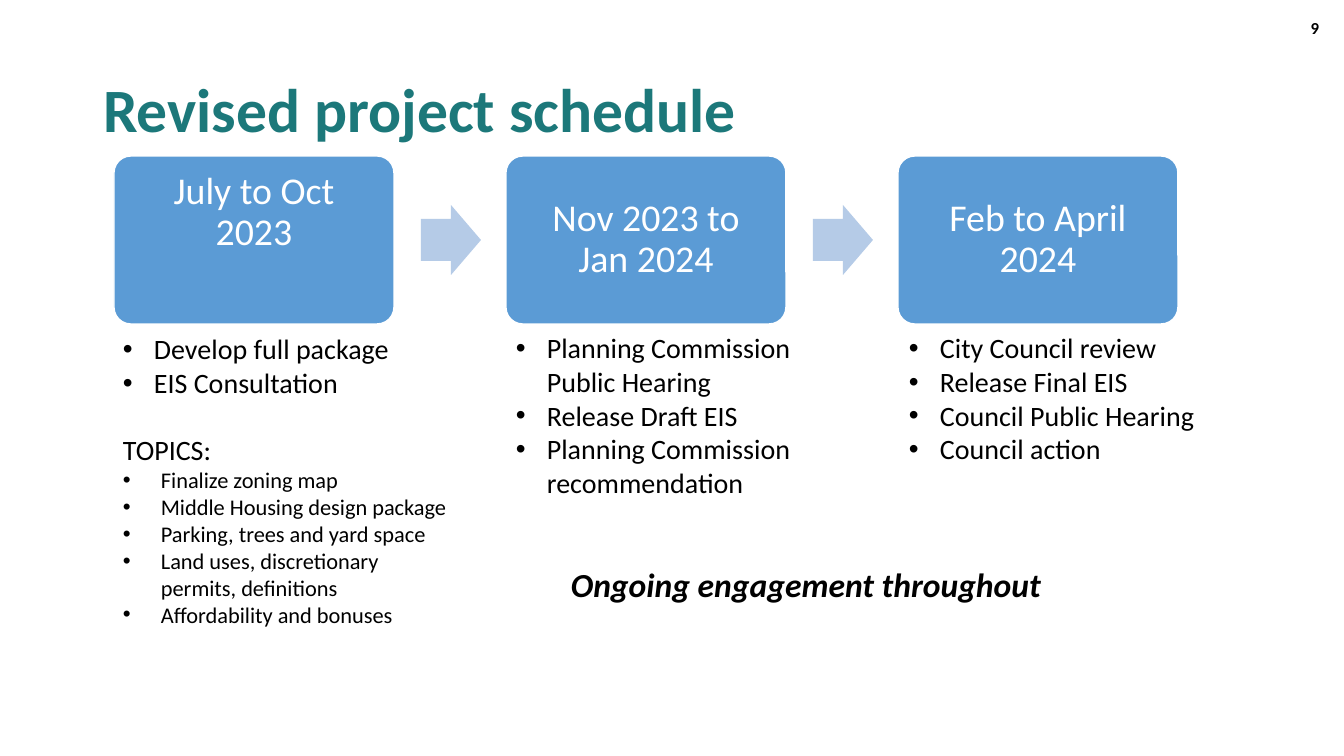
from lxml.etree import SubElement
from pptx import Presentation
from pptx.dml.color import RGBColor
from pptx.enum.shapes import MSO_SHAPE as Shape
from pptx.enum.text import MSO_ANCHOR as Anchor, MSO_AUTO_SIZE as AutoSize, PP_ALIGN as Align
from pptx.oxml.ns import qn
from pptx.util import Pt

# Content: (text, size, bullet indent in px, space before in pt)
TITLE = "Revised project schedule"
PAGE_NUMBER = "9"
CLOSING = "Ongoing engagement throughout"
PHASES = [
    {
        "period": "July to Oct 2023",
        "raise": 54,
        "box": (113, 327, 356, 308),
        "lines": [
            ("Develop full package", 20, 31, 0),
            ("EIS Consultation", 20, 31, 0),
            ("TOPICS:", 20, 0, 24),
            ("Finalize zoning map", 16, 38, 0),
            ("Middle Housing design package", 16, 38, 0),
            ("Parking, trees and yard space", 16, 38, 0),
            ("Land uses, discretionary permits, definitions", 16, 38, 0),
            ("Affordability and bonuses", 16, 38, 0),
        ],
    },
    {
        "period": "Nov 2023 to Jan 2024",
        "raise": 0,
        "box": (506, 326, 305, 179),
        "lines": [
            ("Planning Commission Public Hearing", 20, 31, 0),
            ("Release Draft EIS", 20, 31, 0),
            ("Planning Commission recommendation", 20, 31, 0),
        ],
    },
    {
        "period": "Feb to April 2024",
        "raise": 0,
        "box": (899, 326, 318, 146),
        "lines": [
            ("City Council review", 20, 31, 0),
            ("Release Final EIS", 20, 31, 0),
            ("Council Public Hearing", 20, 31, 0),
            ("Council action", 20, 31, 0),
        ],
    },
]

# Look
FONT = "Calibri"
TEAL = RGBColor(0x1C, 0x78, 0x7A)
BLUE = RGBColor(0x5B, 0x9B, 0xD5)
PALE_BLUE = RGBColor(0xB5, 0xCB, 0xE7)
WHITE = RGBColor(0xFF, 0xFF, 0xFF)
BLACK = RGBColor(0, 0, 0)

# Layout in px
PAGE_WIDTH, PAGE_HEIGHT = 1344, 756
CARD_LEFT, CARD_TOP, CARD_WIDTH, CARD_HEIGHT = 114, 156, 280, 168
CARD_PITCH, CARD_INSET = 392, 16
ARROW_OFFSET, ARROW_WIDTH, ARROW_HEIGHT = 307, 60, 70


def px(length):
    return round(length * 12192000 / PAGE_WIDTH)


def place(*lengths):
    return [px(length) for length in lengths]


def write(para, text, size, color=BLACK, align=Align.LEFT, spacing=1.0, **styles):
    para.alignment, para.line_spacing = align, spacing
    span = para.add_run()
    span.text = text
    span.font.color.rgb = color
    for name, value in {"name": FONT, "size": Pt(size), **styles}.items():
        setattr(span.font, name, value)


def add_bullet(para, indent):
    props = para._p.get_or_add_pPr()
    props.set("marL", str(px(indent)))
    props.set("indent", str(-px(indent)))
    SubElement(props, qn("a:buFont")).set("typeface", "Arial")
    SubElement(props, qn("a:buChar")).set("char", "•")


def add_text(page, box, anchor=Anchor.TOP):
    frame = page.shapes.add_textbox(*place(*box)).text_frame
    frame.word_wrap, frame.vertical_anchor = True, anchor
    return frame


def add_block(page, kind, box, fill, adjustments):
    block = page.shapes.add_shape(kind, *place(*box))
    block.shadow.inherit = False
    block.fill.solid()
    block.fill.fore_color.rgb = fill
    block.line.fill.background()
    for index, value in enumerate(adjustments):
        block.adjustments[index] = value
    return block


def add_card(page, left, phase):
    card = add_block(page, Shape.ROUNDED_RECTANGLE,
                     (left, CARD_TOP, CARD_WIDTH, CARD_HEIGHT), BLUE, [0.1])
    card.line.color.rgb = WHITE
    card.line.width = Pt(1)
    frame = card.text_frame
    frame.word_wrap, frame.vertical_anchor = True, Anchor.MIDDLE
    for side in ("left", "top", "right"):
        setattr(frame, f"margin_{side}", px(CARD_INSET))
    frame.margin_bottom = px(CARD_INSET + phase["raise"])
    write(frame.paragraphs[0], phase["period"], 27, WHITE, Align.CENTER, 0.9)


def add_lines(page, phase):
    frame = add_text(page, phase["box"])
    for index, (text, size, indent, before) in enumerate(phase["lines"]):
        para = frame.add_paragraph() if index else frame.paragraphs[0]
        if indent:
            add_bullet(para, indent)
        if before:
            para.space_before = Pt(before)
        write(para, text, size)


def main():
    deck = Presentation()
    deck.slide_width, deck.slide_height = place(PAGE_WIDTH, PAGE_HEIGHT)
    page = deck.slides.add_slide(deck.slide_layouts[5])

    # Title
    title = page.shapes.title
    title.left, title.top, title.width, title.height = place(93, 40, 1159, 146)
    title.text_frame.vertical_anchor = Anchor.MIDDLE
    title.text_frame.auto_size = AutoSize.NONE
    write(title.text_frame.paragraphs[0], TITLE, 44, TEAL, spacing=0.9, bold=True)

    # Phase cards, arrows between them and the lists below
    for index, phase in enumerate(PHASES):
        left = CARD_LEFT + index * CARD_PITCH
        add_card(page, left, phase)
        if index < len(PHASES) - 1:
            top = CARD_TOP + (CARD_HEIGHT - ARROW_HEIGHT) / 2
            add_block(page, Shape.RIGHT_ARROW,
                      (left + ARROW_OFFSET, top, ARROW_WIDTH, ARROW_HEIGHT),
                      PALE_BLUE, [0.6, 0.5])
        add_lines(page, phase)

    # Closing line and page number
    closing = add_text(page, (561, 559, 496, 50))
    write(closing.paragraphs[0], CLOSING, 24, bold=True, italic=True)
    number = add_text(page, (1027, 8, 302, 40), Anchor.MIDDLE)
    write(number.paragraphs[0], PAGE_NUMBER, 12, align=Align.RIGHT, bold=True)

    deck.save("out.pptx")


if __name__ == "__main__":
    main()
